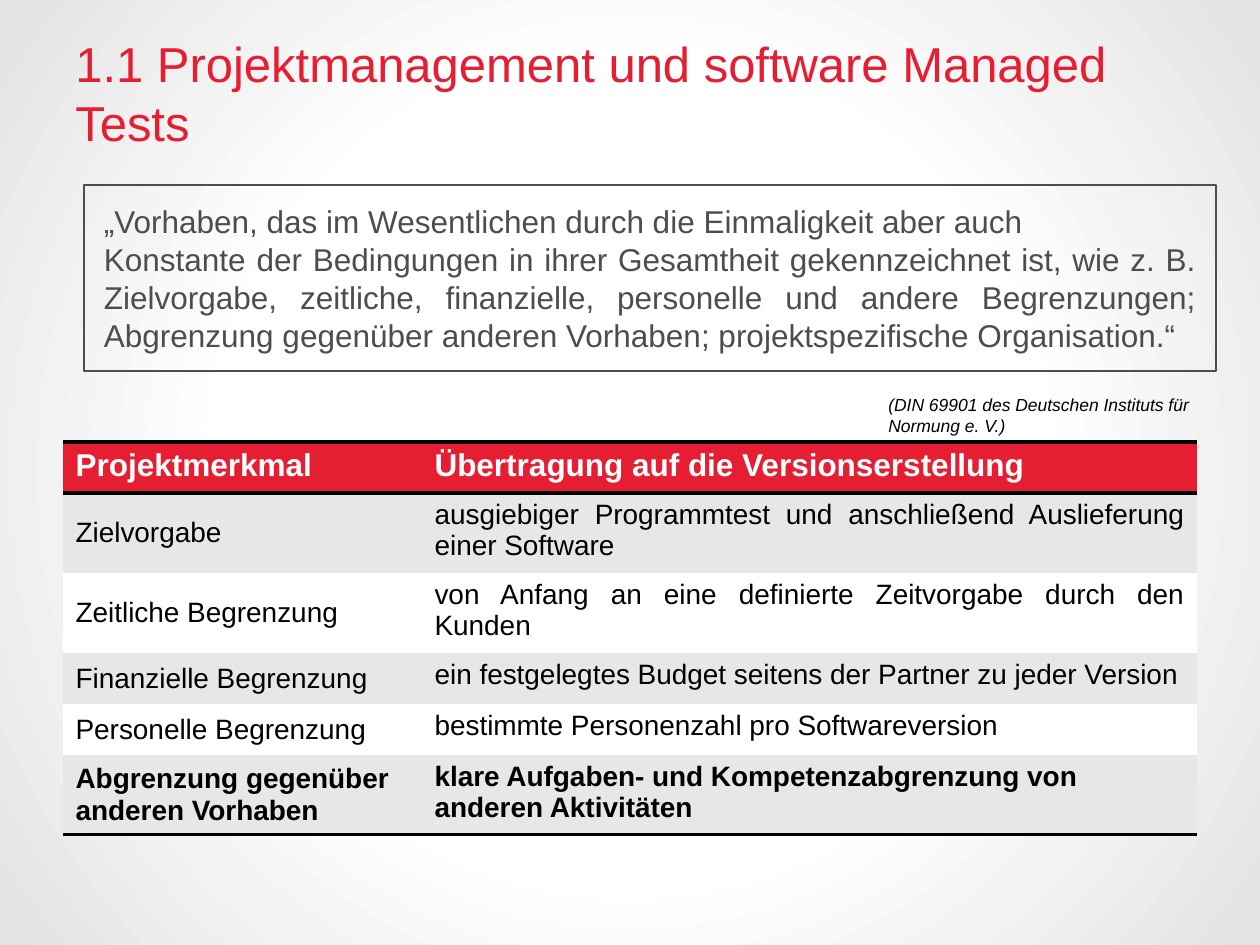
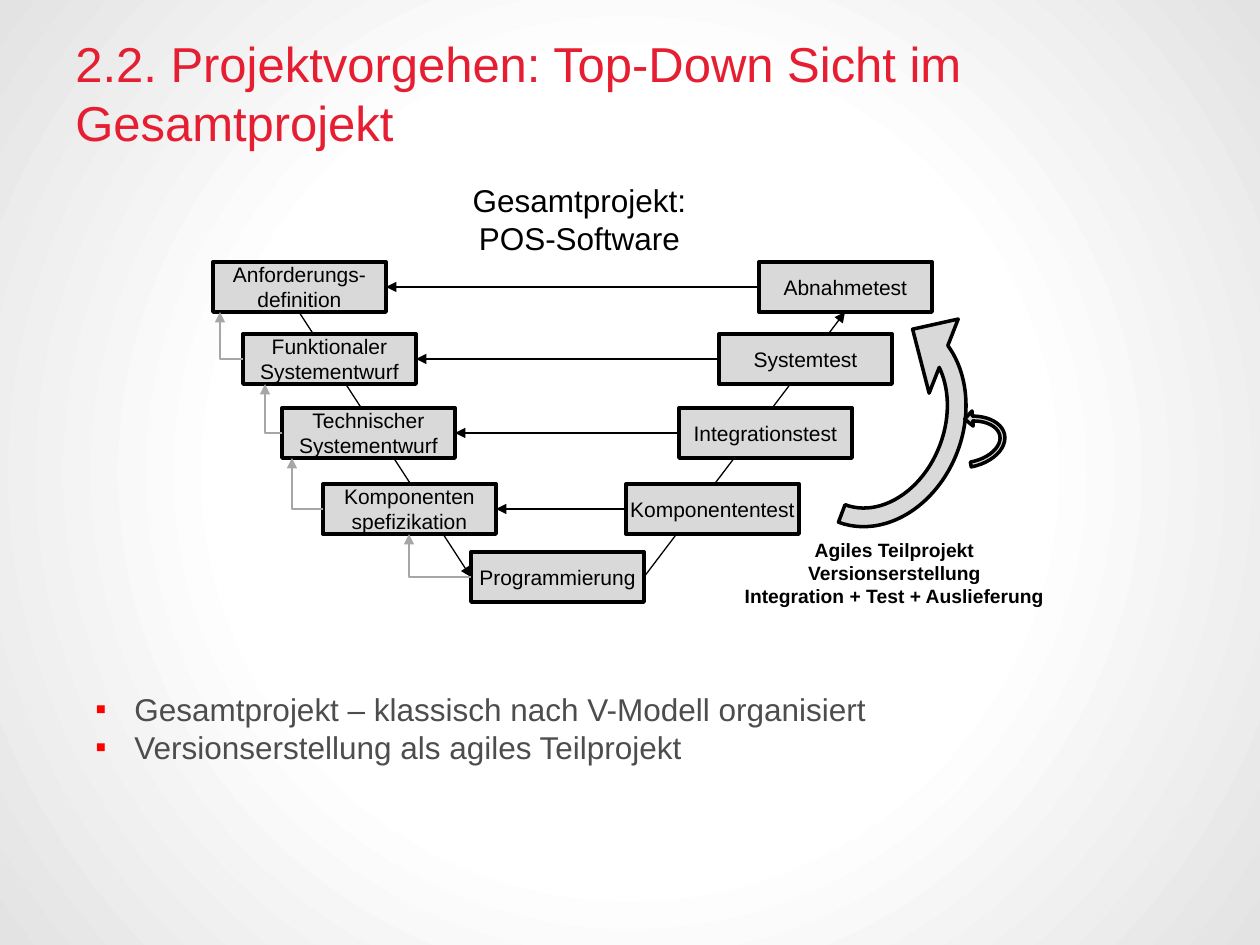
"""Build two slides on project management: a feature table and a V-model."""
from pptx import Presentation
from pptx import util as u
from pptx.dml.color import RGBColor
from pptx.enum import shapes, text
from pptx.oxml import parse_xml
from pptx.oxml.ns import nsdecls, qn

SCALE = 914400 / 126
FONT = "Arial"
RED = RGBColor(0xE6, 0x1E, 0x32)
BRIGHT = RGBColor(0xFF, 0, 0)
BLACK = RGBColor(0, 0, 0)
WHITE = RGBColor(0xFF, 0xFF, 0xFF)
DARK = RGBColor(0x4D, 0x4D, 0x4D)
MID = RGBColor(0xA6, 0xA6, 0xA6)
LIGHT = RGBColor(0xD9, 0xD9, 0xD9)
BAND = RGBColor(0xE7, 0xE7, 0xE7)
EDGE = RGBColor(0xE3, 0xE3, 0xE3)
LEFT, MIDST, JUST = text.PP_ALIGN.LEFT, text.PP_ALIGN.CENTER, text.PP_ALIGN.JUSTIFY
TOP, MIDDLE = text.MSO_ANCHOR.TOP, text.MSO_ANCHOR.MIDDLE
PLAIN = "{2D5ABB26-0587-4C30-8999-92F81FD0307C}"

TITLES = [
    "1.1 Projektmanagement und software Managed Tests",
    "2.2. Projektvorgehen: Top-Down Sicht im Gesamtprojekt",
]
QUOTE = [
    "„Vorhaben, das im Wesentlichen durch die Einmaligkeit aber auch",
    "Konstante der Bedingungen in ihrer Gesamtheit gekennzeichnet ist, wie z. B. "
    "Zielvorgabe, zeitliche, finanzielle, personelle und andere Begrenzungen; "
    "Abgrenzung gegenüber anderen Vorhaben; projektspezifische Organisation.“",
]
SOURCE = ["(DIN 69901 des Deutschen Instituts für Normung e. V.)"]
COLS = [359, 775]
ROWS = [
    (51, LEFT, "Projektmerkmal", "Übertragung auf die Versionserstellung"),
    (80, JUST, "Zielvorgabe",
     "ausgiebiger Programmtest und anschließend Auslieferung einer Software"),
    (80, JUST, "Zeitliche Begrenzung",
     "von Anfang an eine definierte Zeitvorgabe durch den Kunden"),
    (51, LEFT, "Finanzielle Begrenzung",
     "ein festgelegtes Budget seitens der Partner zu jeder Version"),
    (51, LEFT, "Personelle Begrenzung", "bestimmte Personenzahl pro Softwareversion"),
    (80, LEFT, "Abgrenzung gegenüber anderen Vorhaben",
     "klare Aufgaben- und Kompetenzabgrenzung von anderen Aktivitäten"),
]

BOX_W, BOX_H = 173, 50
STEPS = [
    (213, 262, ["Anforderungs-", "definition"]),
    (243, 334, ["Funktionaler", "Systementwurf"]),
    (282, 408, ["Technischer", "Systementwurf"]),
    (323, 484, ["Komponenten", "spefizikation"]),
    (471, 552, ["Programmierung"]),
]
TESTS = [
    (759, 262, ["Abnahmetest"]),
    (719, 334, ["Systemtest"]),
    (679, 408, ["Integrationstest"]),
    (626, 484, ["Komponententest"]),
]
BACKS = [220, 265, 292, 409]
ARCS = [
    ((738, 304, 277, 234), 110.6, (0.08, 14.723, 200.773, 108, 0.17)),
    ((936, 398, 61, 88), 79.2, (0.08, 11.423, 200.773, 108, 0.125)),
]
AGILE = ["Agiles Teilprojekt", "Versionserstellung", "Integration + Test + Auslieferung"]
WHOLE = ["Gesamtprojekt: POS-Software"]
POINTS = [
    "Gesamtprojekt – klassisch nach V-Modell organisiert",
    "Versionserstellung als agiles Teilprojekt",
]


def px(*vals):
    return [u.Emu(round(v * SCALE)) for v in vals]


def xml(tag, body="", attrs=""):
    return parse_xml(f"<a:{tag} {nsdecls('a')} {attrs}>{body}</a:{tag}>")


def tint(color):
    return f'<a:srgbClr val="{color}"/>'


def style(frame, size, color, align=LEFT, bold=False, italic=False):
    for para in frame.paragraphs:
        para.alignment = align
        for run in para.runs:
            font = run.font
            font.name, font.size, font.bold, font.italic = FONT, u.Pt(size), bold, italic
            font.color.rgb = color


def write(shape, lines, size, color, align=LEFT, anchor=TOP, wrap=True, **more):
    frame = shape.text_frame
    frame.text = "\n".join(lines)
    frame.word_wrap, frame.vertical_anchor = wrap, anchor
    style(frame, size, color, align, **more)
    return frame


def label(slide, area, lines, size, color, **more):
    return write(slide.shapes.add_textbox(*px(*area)), lines, size, color, **more)


def shape(slide, kind, area, fill, width):
    item = slide.shapes.add_shape(kind, *px(*area))
    item.shadow.inherit = False
    if fill is None:
        item.fill.background()
    else:
        item.fill.solid()
        item.fill.fore_color.rgb = fill
    item.line.width = u.Pt(width)
    item.line.color.rgb = BLACK
    return item


def arrow(slide, start, end, color=BLACK):
    item = slide.shapes.add_connector(shapes.MSO_CONNECTOR.STRAIGHT, *px(*start, *end))
    item.line.width = u.Pt(0.75)
    item.line.color.rgb = color
    item.line._get_or_add_ln().append(xml("tailEnd", attrs='type="triangle"'))
    item._element.spPr.append(xml("effectLst"))
    return item


def elbow(slide, start, end):
    item = arrow(slide, end, start, MID)
    props = item._element.spPr
    props.find(qn("a:prstGeom")).set("prst", "bentConnector2")
    props.find(qn("a:xfrm")).set("rot", "10800000")


def page(deck, title):
    slide = deck.slides.add_slide(deck.slide_layouts[6])
    slide.background.fill.solid()
    old = next(slide._element.iter(qn("a:solidFill")))
    stops = "".join(f'<a:gs pos="{pos}000">{tint(color)}</a:gs>'
                    for pos, color in ((0, WHITE), (51, WHITE), (100, EDGE)))
    sides = " ".join(f'{side}="50000"' for side in "ltrb")
    old.getparent().replace(old, xml(
        "gradFill", f'<a:gsLst>{stops}</a:gsLst><a:path path="circle">'
        f"<a:fillToRect {sides}/></a:path>", 'rotWithShape="1"'))
    label(slide, (63, 38, 1134, 108), [title], 28, RED, anchor=MIDDLE)
    return slide


def rule(cell, *sides):
    props = cell._tc.get_or_add_tcPr()
    for side in sides:
        props.insert(0, xml("ln" + side, f"<a:solidFill>{tint(BLACK)}</a:solidFill>",
                            'w="25400"'))


def grid(slide):
    area = px(63, 442, sum(COLS), sum(row[0] for row in ROWS))
    table = slide.shapes.add_table(len(ROWS), len(COLS), *area).table
    table._tbl.tblPr.find(qn("a:tableStyleId")).text = PLAIN
    table.first_row = table.horz_banding = False
    for col, width in zip(table.columns, px(*COLS)):
        col.width = width
    last = len(ROWS) - 1
    for r, (high, align, *words) in enumerate(ROWS):
        table.rows[r].height = px(high)[0]
        for c, word in enumerate(words):
            cell = table.cell(r, c)
            cell.text = word
            cell.vertical_anchor = MIDDLE if r and not c else TOP
            style(cell.text_frame, 16 if r else 18, WHITE if r == 0 else BLACK,
                  align if c else LEFT, bold=r in (0, last))
            cell.fill.solid()
            cell.fill.fore_color.rgb = RED if r == 0 else BAND if r % 2 else WHITE
            if r == 0:
                rule(cell, "B", "T")
            elif r == last:
                rule(cell, "B")


def model(slide):
    half, mid = BOX_W // 2, BOX_H // 2
    first, final, accept = STEPS[0], STEPS[-1], TESTS[0]
    base = final[1] + mid
    arrow(slide, (first[0] + half, first[1] + BOX_H), (final[0], base))
    arrow(slide, (final[0] + BOX_W, base), (accept[0] + half, accept[1] + BOX_H))
    for left, top, words in STEPS + TESTS:
        box = shape(slide, shapes.MSO_SHAPE.RECTANGLE, (left, top, BOX_W, BOX_H), LIGHT, 2.25)
        write(box, words, 12, BLACK, align=MIDST, anchor=MIDDLE, wrap=False)
    for step, test in zip(STEPS, TESTS):
        y = step[1] + mid
        arrow(slide, (test[0], y), (step[0] + BOX_W, y))
    for back, upper, lower in zip(BACKS, STEPS, STEPS[1:]):
        elbow(slide, (lower[0], lower[1] + mid), (back, upper[1] + BOX_H))


def arcs(slide):
    for area, turn, bends in ARCS:
        arc = shape(slide, shapes.MSO_SHAPE.CIRCULAR_ARROW, area, LIGHT, 2)
        arc.rotation = turn
        arc._element.spPr.find(qn("a:xfrm")).set("flipH", "1")
        for i, bend in enumerate(bends):
            arc.adjustments[i] = bend


def points(slide):
    frame = label(slide, (83, 684, 804, 127), POINTS, 18, DARK)
    indent = px(39)[0]
    for para in frame.paragraphs:
        props = para._p.get_or_add_pPr()
        props.set("marL", str(indent))
        props.set("indent", str(-indent))
        props.append(xml("buClr", tint(BRIGHT)))
        props.append(xml("buFont", attrs=f'typeface="{FONT}"'))
        props.append(xml("buChar", attrs='char="▪"'))


def main():
    deck = Presentation()
    deck.slide_width, deck.slide_height = px(1260, 945)
    one, two = [page(deck, title) for title in TITLES]

    box = shape(one, shapes.MSO_SHAPE.RECTANGLE, (84, 185, 1132, 186), None, 0.75)
    box.line.color.rgb = DARK
    frame = write(box, QUOTE, 18, DARK, align=JUST, anchor=MIDDLE)
    frame.margin_left = frame.margin_right = px(20)[0]
    frame.margin_top = frame.margin_bottom = px(21)[0]
    label(one, (876, 388, 392, 55), SOURCE, 10, BLACK, italic=True)
    grid(one)

    model(two)
    label(two, (730, 532, 329, 83), AGILE, 11, BLACK, align=MIDST, wrap=False, bold=True)
    arcs(two)
    label(two, (441, 175, 277, 89), WHOLE, 18, BLACK, align=MIDST)
    points(two)
    deck.save("out.pptx")


if __name__ == "__main__":
    main()
